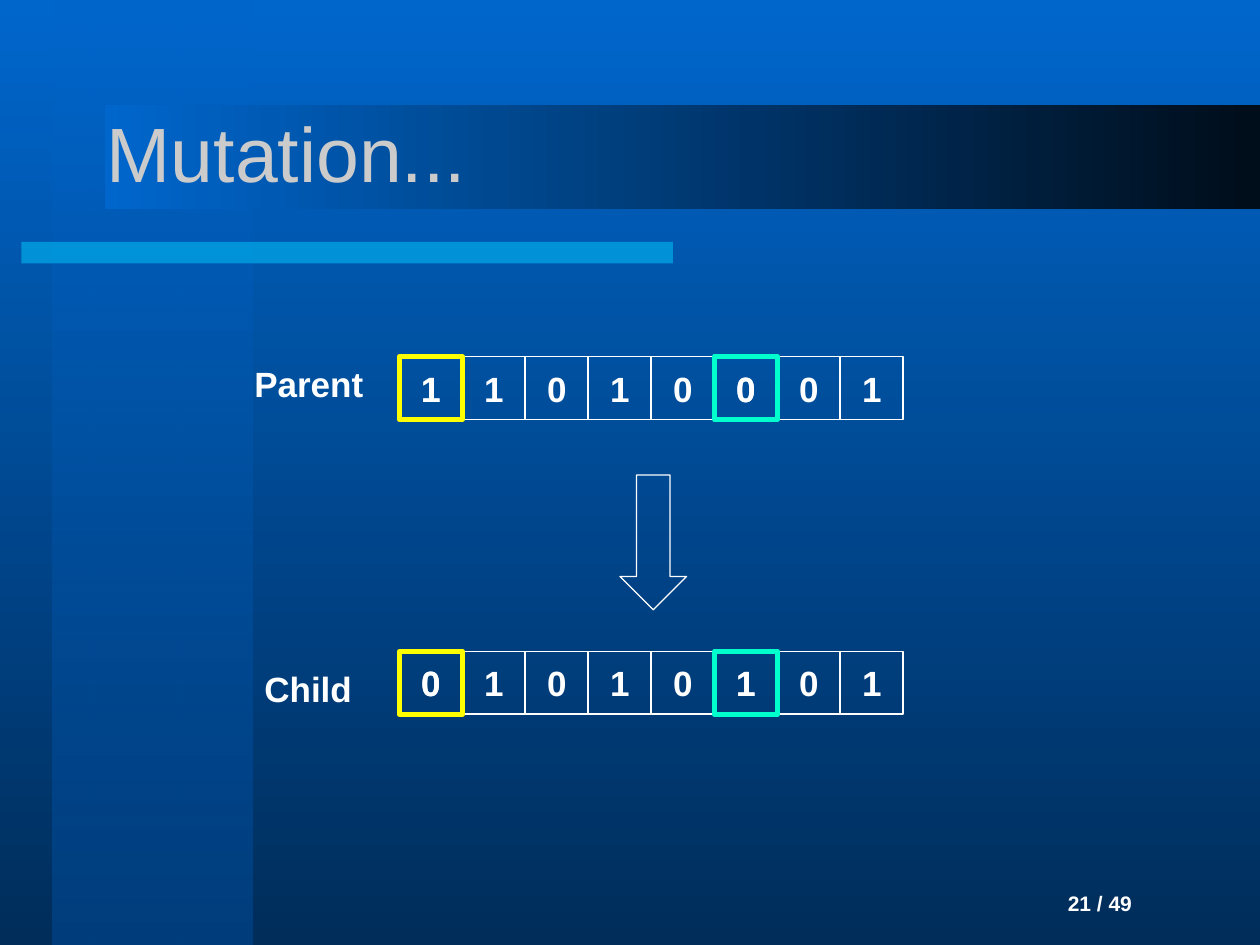
"""Build the Mutation slide: a parent bit string and its mutated child."""
from dataclasses import dataclass

from lxml.etree import SubElement
from pptx import Presentation
from pptx.dml.color import RGBColor
from pptx.enum.shapes import MSO_SHAPE
from pptx.enum.text import MSO_ANCHOR, PP_ALIGN
from pptx.oxml.ns import qn
from pptx.util import Inches, Pt


@dataclass(frozen=True)
class Theme:
    """Colours and type sizes of the slide."""
    font: str = "Arial"
    sky: str = "0066CC"
    navy: str = "002D5A"
    band: str = "003E7D"
    night: str = "000D1A"
    stripe: str = "00CCFF"
    title: str = "CBCBCB"
    white: str = "FFFFFF"
    yellow: str = "FFFF00"
    green: str = "00FFCC"
    title_size: int = 44
    body_size: int = 20
    number_size: int = 12


class SlideBuilder:
    """Draws styled elements on one slide."""

    def __init__(self, page, theme):
        self.page = page
        self.theme = theme

    def gradient(self, fill, colors, angle):
        """Give a fill a linear gradient between two colours."""
        fill.gradient()
        fill.gradient_angle = angle
        for stop, color in zip(fill.gradient_stops, colors):
            stop.color.rgb = RGBColor.from_string(color)

    def shape(self, kind, place, line=None, width=1):
        """Add an unfilled preset shape with an optional outline."""
        shape = self.page.shapes.add_shape(kind, *map(Inches, place))
        shape.shadow.inherit = False
        shape.fill.background()
        if line:
            shape.line.color.rgb = RGBColor.from_string(line)
            shape.line.width = Pt(width)
        else:
            shape.line.fill.background()
        return shape

    def panel(self, place, colors, angle=0, opacity=()):
        """Add a borderless rectangle with one colour or a gradient."""
        panel = self.shape(MSO_SHAPE.RECTANGLE, place)
        if len(colors) == 1:
            panel.fill.solid()
            panel.fill.fore_color.rgb = RGBColor.from_string(colors[0])
        else:
            self.gradient(panel.fill, colors, angle)
        for color, percent in zip(panel.element.spPr.iter(qn("a:srgbClr")), opacity):
            SubElement(color, qn("a:alpha"), val=str(percent * 1000))

    def label(self, box, text, size, color, bold=True, align=PP_ALIGN.LEFT, wrap=False):
        """Put one styled line of text in a box."""
        frame = box.text_frame
        frame.word_wrap = wrap
        frame.vertical_anchor = MSO_ANCHOR.MIDDLE
        para = frame.paragraphs[0]
        para.alignment = align
        span = para.add_run()
        span.text = text
        formats = {"name": self.theme.font, "size": Pt(size), "bold": bold}
        for name, value in formats.items():
            setattr(span.font, name, value)
        span.font.color.rgb = RGBColor.from_string(color)

    def text(self, place, text, size, color, **options):
        """Add a text box."""
        box = self.page.shapes.add_textbox(*map(Inches, place))
        self.label(box, text, size, color, **options)

    def cell(self, index, top, bit, line, width):
        """Add one bit cell of a row."""
        side = 0.5
        place = (3.17 + index * side, top, side, side)
        cell = self.shape(MSO_SHAPE.RECTANGLE, place, line, width)
        self.label(cell, bit, self.theme.body_size, self.theme.white, align=PP_ALIGN.CENTER)

    def bits(self, top, bits, marks):
        """Add a row of bits and frame the mutated ones."""
        for index, bit in enumerate(bits):
            self.cell(index, top, bit, self.theme.white, 1)
        for index, color in marks.items():
            self.cell(index, top, bits[index], color, 3)


def main():
    """Create and save the deck."""
    theme = Theme()
    deck = Presentation()
    deck.slide_width, deck.slide_height = Inches(10), Inches(7.5)
    page = deck.slides.add_slide(deck.slide_layouts[6])
    builder = SlideBuilder(page, theme)

    builder.gradient(page.background.fill, (theme.sky, theme.navy), 270)
    builder.panel((0.42, 0, 1.58, 7.5), (theme.sky, theme.band), 270, (50, 100))
    builder.panel((0.17, 1.92, 5.17, 0.17), (theme.stripe,), opacity=(50,))
    builder.panel((0.83, 0.83, 9.17, 0.83), (theme.sky, theme.night))

    builder.text((8.33, 6.92, 2.08, 0.5), " 21 / 49", theme.number_size, theme.white, wrap=True)
    builder.text((0.75, 0.58, 8.5, 1.25), "Mutation...", theme.title_size, theme.title,
                 bold=False, wrap=True)

    marks = {0: theme.yellow, 5: theme.green}
    builder.bits(2.83, "11010001", marks)
    builder.bits(5.17, "01010101", marks)
    builder.shape(MSO_SHAPE.DOWN_ARROW, (4.92, 3.77, 0.53, 1.07), theme.white, 0.75)

    builder.text((1.92, 2.83, 1.07, 0.43), "Parent", theme.body_size, theme.white)
    builder.text((2, 5.25, 0.9, 0.43), "Child", theme.body_size, theme.white)
    deck.save("out.pptx")


if __name__ == "__main__":
    main()
